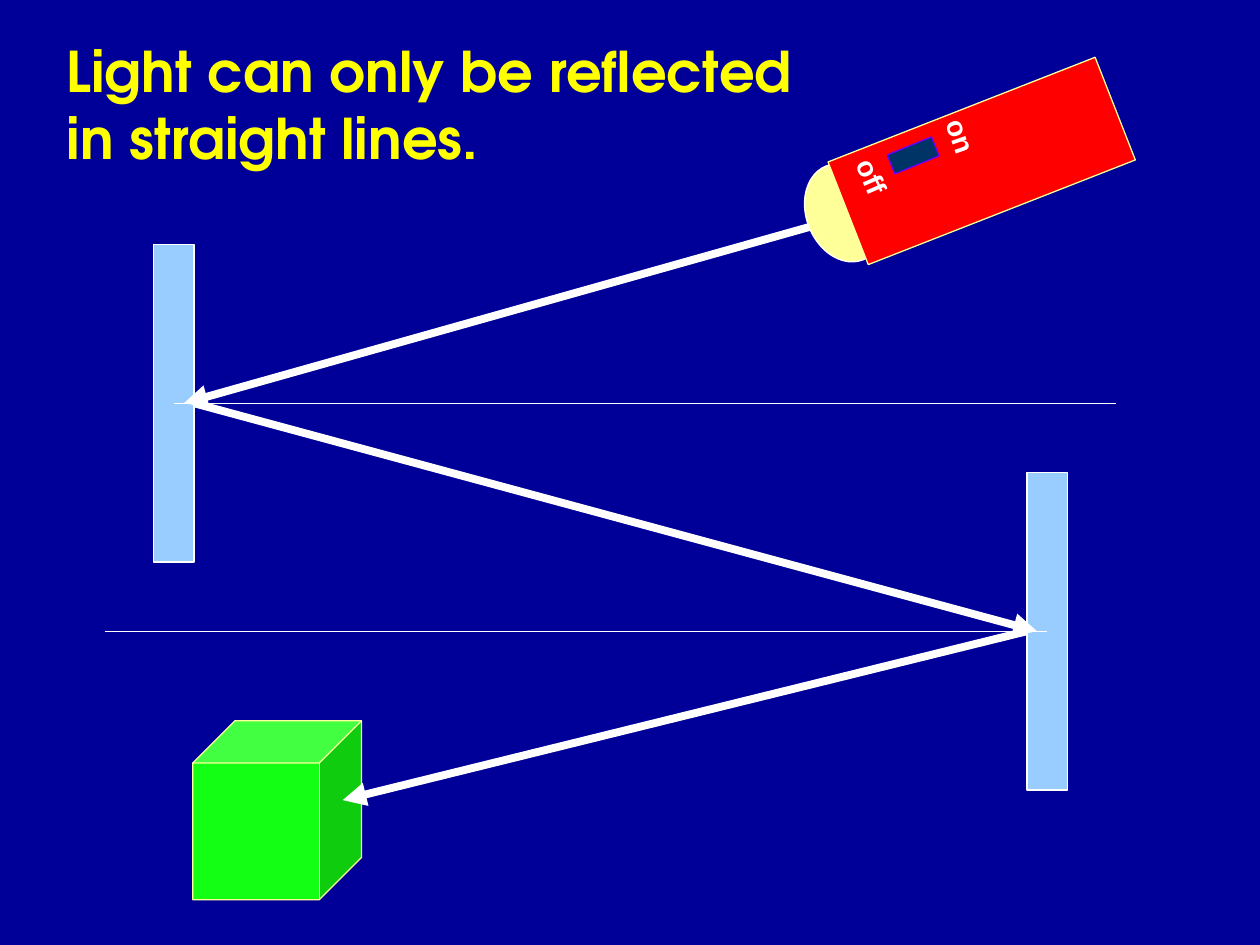
from lxml import etree
from pptx import Presentation
from pptx import util as u
from pptx.dml.color import RGBColor
from pptx.enum import shapes, text
from pptx.oxml.ns import qn

CELL = u.Inches(0.1)  # the slide is a grid of 100 columns by 75 rows
COLS, ROWS = 100, 75

NAVY = RGBColor(0x00, 0x00, 0x99)
WHITE = RGBColor(0xFF, 0xFF, 0xFF)
YELLOW = RGBColor(0xFF, 0xFF, 0x00)
CREAM = RGBColor(0xFF, 0xFF, 0x99)
SKY = RGBColor(0x99, 0xCC, 0xFF)
GREEN = RGBColor(0x13, 0xFF, 0x13)
RED = RGBColor(0xFF, 0x00, 0x00)
TEAL = RGBColor(0x00, 0x33, 0x66)
VIOLET = RGBColor(0x66, 0x00, 0xFF)


def cells(*values):
    return [round(v * CELL) for v in values]


def add_block(parent, kind, box, fill, line, rotation=0):
    sp = parent.add_shape(kind, *cells(*box))
    sp.shadow.inherit = False
    sp.fill.solid()
    sp.fill.fore_color.rgb = fill
    sp.line.color.rgb = line
    sp.line.width = u.Pt(0.75)
    sp.rotation = rotation
    return sp


def add_label(parent, box, words, font, size, color, wrap=True, rotation=0):
    sp = parent.add_textbox(*cells(*box))
    sp.rotation = rotation
    tf = sp.text_frame
    tf.word_wrap = wrap
    tf.text = words
    f = tf.paragraphs[0].runs[0].font
    f.name, f.size, f.bold = font, u.Pt(size), True
    f.color.rgb = color
    return sp


def add_line(parent, start, end, width):
    cn = parent.add_connector(shapes.MSO_CONNECTOR.STRAIGHT, *cells(*start, *end))
    cn.line.color.rgb = WHITE
    cn.line.width = u.Pt(width)
    etree.SubElement(cn._element.spPr, qn("a:effectLst"))
    return cn


def add_ray(parent, start, end):
    cn = add_line(parent, start, end, 4.5)
    etree.SubElement(cn.line._get_or_add_ln(), qn("a:tailEnd"), type="triangle")
    return cn


def add_title(parent, box):
    sp = add_label(parent, box, "Light can only be reflected in straight lines.",
                   "TeX Gyre Adventor", 32, YELLOW)
    sp.text_frame.vertical_anchor = text.MSO_ANCHOR.MIDDLE


def add_mirror(parent, box):
    return add_block(parent, shapes.MSO_SHAPE.RECTANGLE, box, SKY, WHITE)


def add_torch(parent, box):
    """Tilted torch; parts are given as shares of the box."""
    left, top, width, height = box
    tilt = 338.6
    g = parent.add_group_shape().shapes

    def part(x, y, w, h):
        return left + x * width, top + y * height, w * width, h * height

    rect = shapes.MSO_SHAPE.RECTANGLE
    add_block(g, shapes.MSO_SHAPE.OVAL, part(0, 0.36, 0.24, 0.64), CREAM, WHITE, tilt)
    add_block(g, rect, part(0.1, 0, 0.9, 0.7), RED, CREAM, tilt)
    add_block(g, rect, part(0.26, 0.25, 0.15, 0.13), TEAL, VIOLET, tilt - 0.8)
    add_label(g, part(0.39, 0.05, 0.19, 0.3), "on", "Arial", 16, WHITE, True, 70.9)
    add_label(g, part(0.11, 0.3, 0.19, 0.3), "off", "Arial", 16, WHITE, False, 66.7)


def add_light_path(parent, left_box, right_box):
    """Mirrors, the rays between them and the normal through each mirror."""
    lx, ly, w, h = left_box
    rx, ry = right_box[:2]
    left_y, right_y = ly + h / 2, ry + h / 2
    normal = 74.8

    left_mirror = add_mirror(parent, left_box)
    right_mirror = add_mirror(parent, right_box)
    add_block(parent, shapes.MSO_SHAPE.CUBE, (15.3, 57.2, 13.4, 14.2), GREEN, CREAM)

    add_ray(parent, (65, 17.8), (lx + 0.75 * w, left_y))
    across = add_ray(parent, (lx + w, left_y), (rx + 0.25 * w, right_y))
    across.begin_connect(left_mirror, 3)
    back = add_ray(parent, (rx, right_y), (27.2, 63.5))
    back.begin_connect(right_mirror, 1)

    left_x, right_x = lx + w / 2, rx + w / 2
    add_line(parent, (left_x, left_y), (left_x + normal, left_y), 0.75)
    add_line(parent, (right_x - normal, right_y), (right_x, right_y), 0.75)


def main():
    prs = Presentation()
    prs.slide_width, prs.slide_height = cells(COLS, ROWS)
    s = prs.slides.add_slide(prs.slide_layouts[6])
    s.background.fill.solid()
    s.background.fill.fore_color.rgb = NAVY

    add_light_path(s.shapes, (12.2, 19.4, 3.2, 25.2), (81.5, 37.5, 3.2, 25.2))
    add_title(s.shapes, (4.3, 3.6, 63.9, 9.3))
    add_torch(s.shapes, (64, 8.4, 25.3, 12.5))
    prs.save("out.pptx")


if __name__ == "__main__":
    main()
